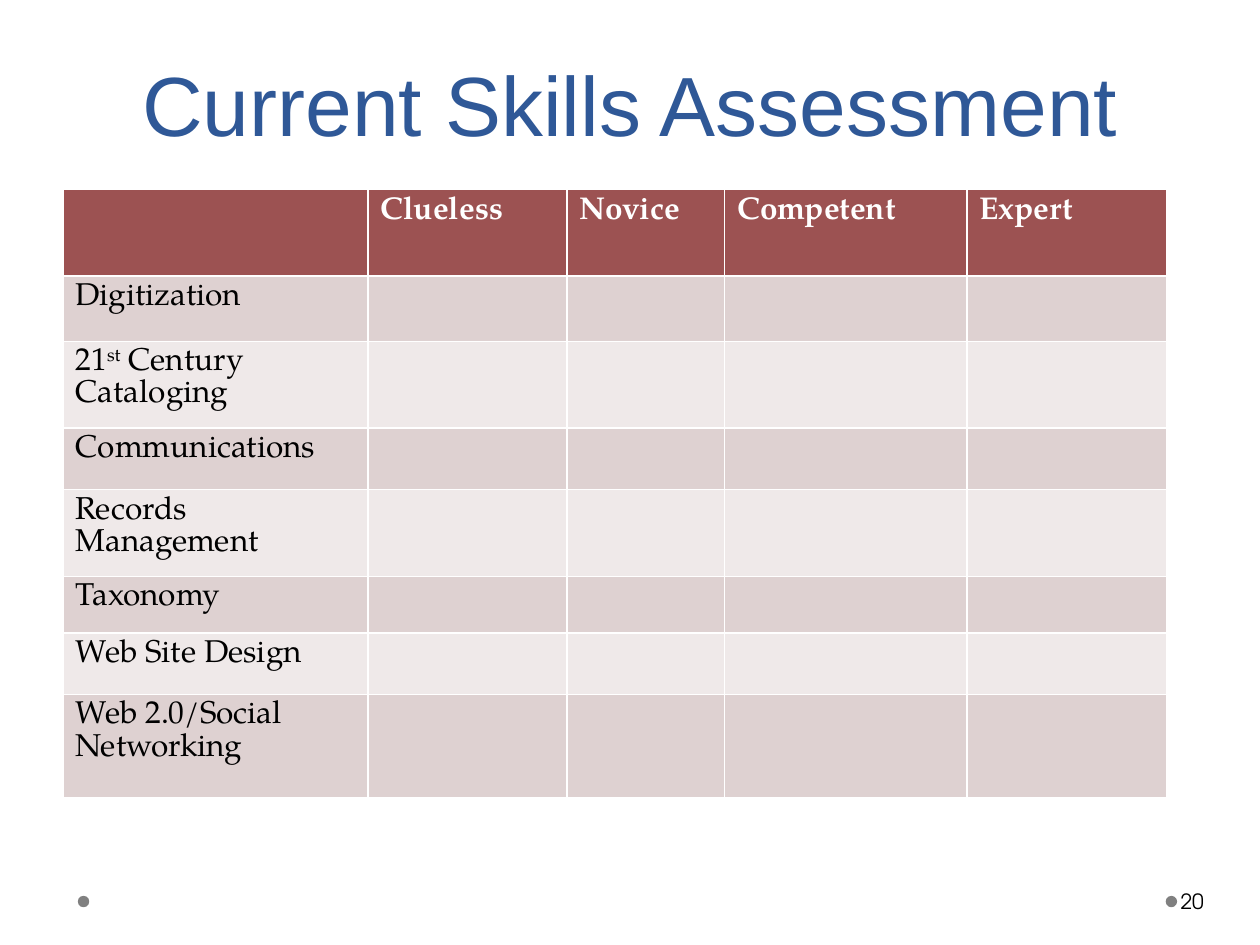
"""Build the skills assessment slide: a title, a rating grid and a page number."""
from dataclasses import dataclass

from pptx import Presentation
from pptx import util as u
from pptx.dml.color import RGBColor
from pptx.enum import shapes, text


@dataclass(frozen=True)
class Theme:
    title_font: str = "Arial"
    grid_font: str = "TeX Gyre Pagella"
    number_font: str = "TeX Gyre Adventor"
    title_size: float = 48
    title_leading: float = 58
    grid_size: float = 18
    grid_leading: float = 18.3
    number_size: float = 12
    title: str = "2F5897"
    header: str = "9C5252"
    bands: tuple[str, str] = ("DED1D1", "EFE9E9")
    dot: str = "808080"
    light: str = "FFFFFF"
    dark: str = "000000"


@dataclass(frozen=True)
class Skill:
    """A row label, with an optional raised part between its two ends."""
    label: str
    height: float
    raised: str = ""
    rest: str = ""


@dataclass(frozen=True)
class Rating:
    label: str
    width: float


THEME = Theme()
HEADER_HEIGHT = 1.75
RATINGS = (
    Rating("", 6.15), Rating("Clueless", 4.01), Rating("Novice", 3.18),
    Rating("Competent", 4.88), Rating("Expert", 4.04),
)
SKILLS = (
    Skill("Digitization", 1.32),
    Skill("21", 1.75, "st", " Century Cataloging"),
    Skill("Communications", 1.24),
    Skill("Records Management", 1.75),
    Skill("Taxonomy", 1.14),
    Skill("Web Site Design", 1.24),
    Skill("Web 2.0/Social Networking", 2.08),
)


def style_font(font, name: str, size: float, color: str, bold: bool = False) -> None:
    font.name, font.size, font.bold = name, u.Pt(size), bold
    font.color.rgb = RGBColor.from_string(color)


def fill_cell(cell, color: str) -> None:
    cell.fill.solid()
    cell.fill.fore_color.rgb = RGBColor.from_string(color)


def write_label(cell, parts: tuple[str, ...], color: str, bold: bool) -> None:
    """Write the parts as runs, raising the second one."""
    line = cell.text_frame.paragraphs[0]
    line.line_spacing = u.Pt(THEME.grid_leading)
    for position, part in enumerate(parts):
        if part:
            run = line.add_run()
            run.text = part
            style_font(run.font, THEME.grid_font, THEME.grid_size, color, bold)
            if position == 1:
                run._r.get_or_add_rPr().set("baseline", "30000")


def add_dot(slide, left: float) -> None:
    dot = slide.shapes.add_shape(shapes.MSO_SHAPE.OVAL, u.Cm(left), u.Cm(18.06),
                                 u.Cm(0.23), u.Cm(0.23))
    dot.shadow.inherit = False
    dot.fill.solid()
    dot.fill.fore_color.rgb = RGBColor.from_string(THEME.dot)
    dot.line.fill.background()


def add_title(slide, wording: str) -> None:
    frame = slide.shapes.add_textbox(0, u.Cm(1.27), u.Cm(25.4), u.Cm(4.01)).text_frame
    frame.word_wrap = True
    frame.vertical_anchor = text.MSO_ANCHOR.BOTTOM
    frame.margin_bottom = u.Cm(2.18)
    frame.text = wording
    heading = frame.paragraphs[0]
    heading.alignment = text.PP_ALIGN.CENTER
    heading.line_spacing = u.Pt(THEME.title_leading)
    style_font(heading.runs[0].font, THEME.title_font, THEME.title_size, THEME.title)


def add_page_number(slide, number: str) -> None:
    frame = slide.shapes.add_textbox(u.Cm(23.72), u.Cm(17.65), u.Cm(1.55), u.Cm(1.02)).text_frame
    frame.word_wrap = True
    frame.vertical_anchor = text.MSO_ANCHOR.MIDDLE
    frame.margin_left = u.Cm(0.08)
    frame.margin_right = u.Cm(0.13)
    frame.text = number
    style_font(frame.paragraphs[0].runs[0].font, THEME.number_font,
               THEME.number_size, THEME.dark)


def add_skill_grid(slide) -> None:
    heights = (HEADER_HEIGHT, *(skill.height for skill in SKILLS))
    grid = slide.shapes.add_table(
        len(heights), len(RATINGS), u.Cm(1.27), u.Cm(3.81),
        u.Cm(sum(rating.width for rating in RATINGS)), u.Cm(sum(heights))).table
    for row, height in zip(grid.rows, heights):
        row.height = u.Cm(height)
    for index, rating in enumerate(RATINGS):
        grid.columns[index].width = u.Cm(rating.width)
        fill_cell(grid.cell(0, index), THEME.header)
        write_label(grid.cell(0, index), (rating.label,), THEME.light, True)
    for index, skill in enumerate(SKILLS):
        for cell in grid.rows[index + 1].cells:
            fill_cell(cell, THEME.bands[index % 2])
        write_label(grid.cell(index + 1, 0), (skill.label, skill.raised, skill.rest),
                    THEME.dark, False)


def main() -> None:
    deck = Presentation()
    deck.slide_width, deck.slide_height = u.Cm(25.4), u.Cm(19.05)
    slide = deck.slides.add_slide(deck.slide_layouts[6])
    for left in (23.5, 1.57):
        add_dot(slide, left)
    add_title(slide, "Current Skills Assessment")
    add_page_number(slide, "20")
    add_skill_grid(slide)
    deck.save("out.pptx")


if __name__ == "__main__":
    main()
